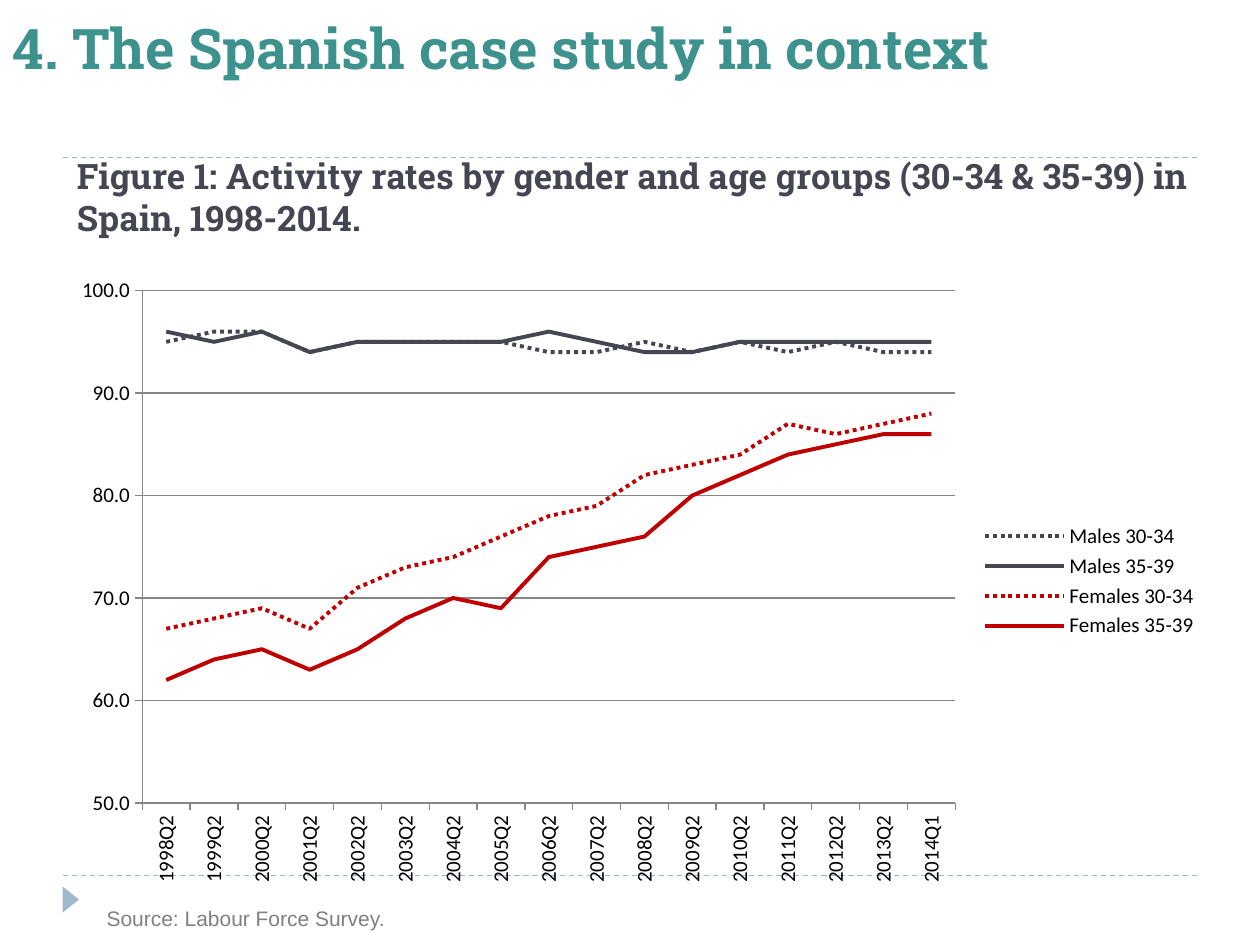
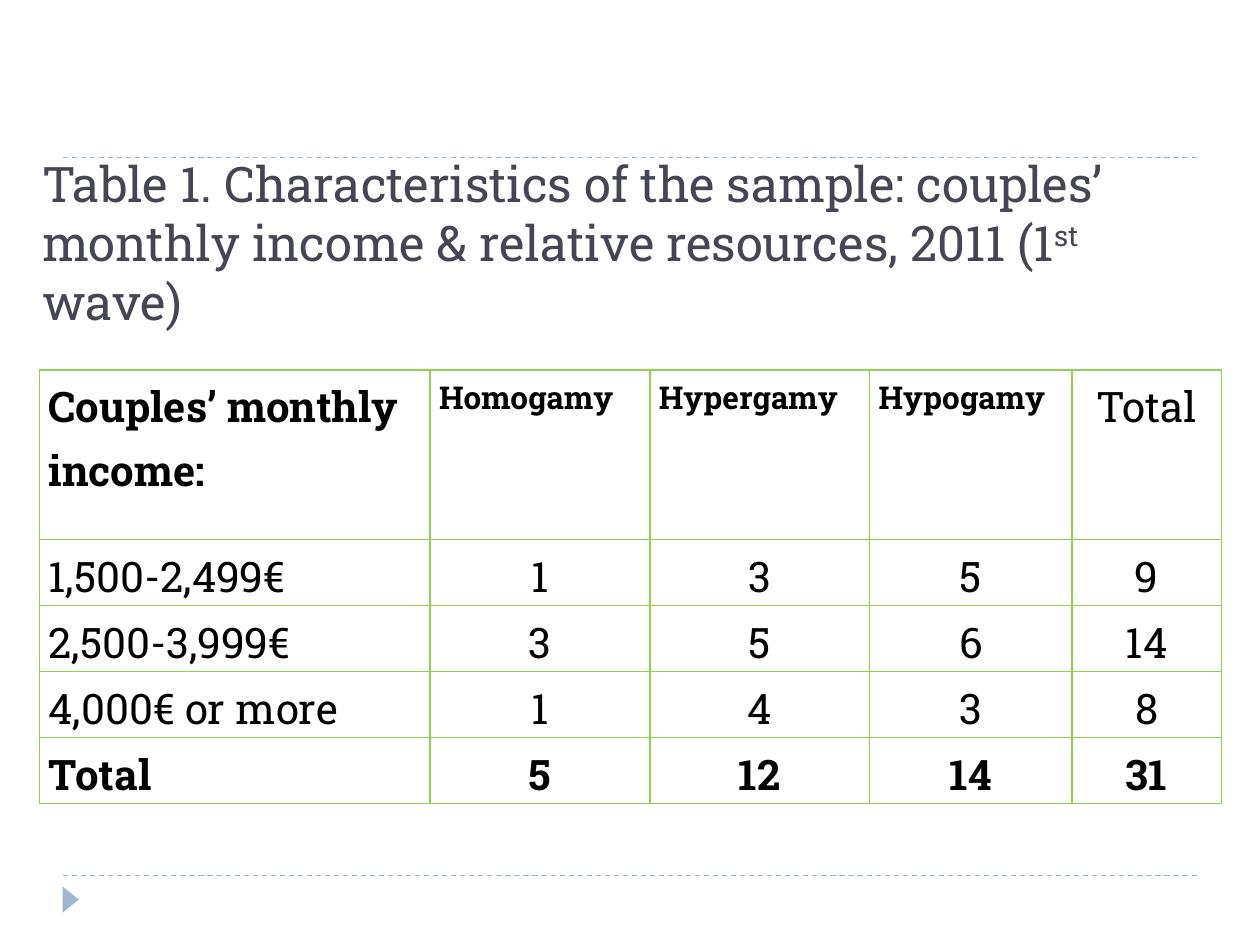
from dataclasses import dataclass

from pptx import Presentation
from pptx.chart.data import CategoryChartData
from pptx.dml.color import RGBColor
from pptx.enum.chart import XL_CHART_TYPE as ChartType, XL_LEGEND_POSITION as LegendSpot, XL_TICK_MARK as Tick
from pptx.enum.dml import MSO_LINE as Dash
from pptx.enum.shapes import MSO_CONNECTOR as Connector, MSO_SHAPE as Shape
from pptx.enum.text import MSO_ANCHOR as Anchor, PP_ALIGN as Align
from pptx.oxml.xmlchemy import OxmlElement as Element
from pptx.util import Cm, Pt


@dataclass(frozen=True)
class Theme:
    teal: str = "3E928E"
    slate: str = "464653"
    red: str = "C00000"
    rule: str = "9FB8CD"
    grey: str = "808080"
    axis: str = "868686"
    black: str = "000000"
    border: str = "92D050"
    head_font: str = "Roboto Slab"
    note_font: str = "Arial"
    chart_font: str = "Calibri"
    title: int = 32
    table_title: int = 28
    cell: int = 24
    caption: int = 20
    group: int = 18
    small: int = 12


THEME = Theme()

# Content: activity rates
SECTION = "4. The Spanish case study in context"
CAPTION = "Figure 1: Activity rates by gender and age groups (30-34 & 35-39) in Spain, 1998-2014."
SOURCE = "Source: Labour Force Survey."
QUARTERS = [f"{year}Q2" for year in range(1998, 2014)] + ["2014Q1"]
RATES = [  # name, colour, dotted, values
    ("Males 30-34", THEME.slate, True,
     [95, 96, 96, 94, 95, 95, 95, 95, 94, 94, 95, 94, 95, 94, 95, 94, 94]),
    ("Males 35-39", THEME.slate, False,
     [96, 95, 96, 94, 95, 95, 95, 95, 96, 95, 94, 94, 95, 95, 95, 95, 95]),
    ("Females 30-34", THEME.red, True,
     [67, 68, 69, 67, 71, 73, 74, 76, 78, 79, 82, 83, 84, 87, 86, 87, 88]),
    ("Females 35-39", THEME.red, False,
     [62, 64, 65, 63, 65, 68, 70, 69, 74, 75, 76, 80, 82, 84, 85, 86, 86]),
]
CHART_LEFT, CHART_TOP, CHART_WIDTH, CHART_HEIGHT = 1.19, 5.36, 23.22, 12.7
PLOT_AREA = {  # shares of the chart frame
    "x": 1.68 / CHART_WIDTH,
    "y": 0.5 / CHART_HEIGHT,
    "w": 16.39 / CHART_WIDTH,
    "h": 10.33 / CHART_HEIGHT,
}

# Content: sample table; a "^" marks raised text
TABLE_TITLE = ["Table 1. Characteristics of the sample: couples’ monthly income & relative resources, 2011 (1",
               "^st", " wave)"]
SAMPLE = [
    ("Couples’ monthly income:", "Homogamy", "Hypergamy", "Hypogamy", "Total"),
    ("1,500-2,499€", "1", "3", "5", "9"),
    ("2,500-3,999€", "3", "5", "6", "14"),
    ("4,000€ or more", "1", "4", "3", "8"),
    ("Total", "5", "12", "14", "31"),
]
COLUMN_WIDTHS = [7.87, 4.43, 4.43, 4.08, 3.01]
HEAD_HEIGHT, ROW_HEIGHT = 3.42, 1.33


def rgb(colour):
    return RGBColor.from_string(colour)


def child(parent, tag, **attributes):
    node = Element(tag)
    for name, value in attributes.items():
        node.set(name, str(value))
    parent.append(node)
    return node


def write(frame, text, *, size, colour, font=THEME.head_font, bold=False,
          align=Align.LEFT, spacing=None, after=None):
    """Fill the frame's first paragraph with a string or a list of spans."""
    para = frame.paragraphs[0]
    para.alignment = align
    if spacing:
        para.line_spacing = spacing
    if after:
        para.space_after = Pt(after)
    for part in [text] if isinstance(text, str) else text:
        span = para.add_run()
        span.text = part.lstrip("^")
        span.font.name, span.font.size, span.font.bold = font, Pt(size), bold
        span.font.color.rgb = rgb(colour)
        if part.startswith("^"):
            span.font._element.set("baseline", "30000")


def add_text(page, place, text, *, anchor=Anchor.BOTTOM, wrap=True, **style):
    frame = page.shapes.add_textbox(*map(Cm, place)).text_frame
    frame.word_wrap = wrap
    frame.vertical_anchor = anchor
    write(frame, text, **style)


def add_page(deck):
    """Add a blank page with the two dashed rules and the corner marker."""
    page = deck.slides.add_slide(deck.slide_layouts[6])
    for y in (17.65, 3.18):
        rule = page.shapes.add_connector(Connector.STRAIGHT, Cm(1.27), Cm(y), Cm(24.13), Cm(y))
        rule.line.color.rgb = rgb(THEME.rule)
        rule.line.width = Pt(0.75)
        rule.line.dash_style = Dash.DASH
        child(rule.element.xpath("p:spPr")[0], "a:effectLst")
    marker = page.shapes.add_shape(Shape.ISOSCELES_TRIANGLE, Cm(1.16), Cm(17.97), Cm(0.53), Cm(0.33))
    marker.rotation = 90
    marker.shadow.inherit = False
    marker.fill.solid()
    marker.fill.fore_color.rgb = rgb(THEME.rule)
    marker.line.fill.background()
    return page


def place_plot(chart):
    """Fix the inner plot area inside the chart frame."""
    plot_area = chart.element.xpath(".//c:plotArea")[0]
    for old in plot_area.xpath("c:layout"):
        plot_area.remove(old)
    layout = Element("c:layout")
    manual = child(layout, "c:manualLayout")
    child(manual, "c:layoutTarget", val="inner")
    for side in "xy":
        child(manual, f"c:{side}Mode", val="edge")
    for side, share in PLOT_AREA.items():
        child(manual, f"c:{side}", val=share)
    plot_area.insert(0, layout)


def add_rates_chart(page):
    data = CategoryChartData(number_format="0.0")
    data.categories = QUARTERS
    for name, _, _, values in RATES:
        data.add_series(name, values)
    chart = page.shapes.add_chart(ChartType.LINE, Cm(CHART_LEFT), Cm(CHART_TOP),
                                  Cm(CHART_WIDTH), Cm(CHART_HEIGHT), data).chart
    chart.has_title = False
    chart.font.name, chart.font.size = THEME.chart_font, Pt(THEME.small)
    chart.font.color.rgb = rgb(THEME.black)
    chart.has_legend = True
    chart.legend.position = LegendSpot.RIGHT
    chart.legend.include_in_layout = False
    chart.legend.font.size = Pt(THEME.small)

    # Axes
    rates, quarters = chart.value_axis, chart.category_axis
    rates.minimum_scale, rates.maximum_scale, rates.major_unit = 50, 100, 10
    rates.has_major_gridlines = True
    rates.tick_labels.number_format = "0.0"
    rates.tick_labels.number_format_is_linked = False
    for axis in (rates, quarters):
        axis.major_tick_mark, axis.minor_tick_mark = Tick.OUTSIDE, Tick.NONE
        axis.tick_labels.font.size = Pt(THEME.small)
    for part in (rates, quarters, rates.major_gridlines):
        part.format.line.color.rgb = rgb(THEME.axis)
        part.format.line.width = Pt(0.75)
    label_body = chart.element.xpath(".//c:catAx/c:txPr/a:bodyPr")[0]
    label_body.set("rot", "-5400000")
    label_body.set("vert", "horz")

    # Lines
    chart.plots[0].vary_by_categories = False
    for series, (_, colour, dotted, _) in zip(chart.plots[0].series, RATES):
        series.smooth = False
        series.format.line.color.rgb = rgb(colour)
        series.format.line.width = Pt(2.25)
        if dotted:
            series.format.line.dash_style = Dash.ROUND_DOT
    place_plot(chart)


def add_borders(cell):
    properties = cell._tc.get_or_add_tcPr()
    for side in "LRTB":
        line = child(properties, f"a:ln{side}", w=Pt(1))
        child(child(line, "a:solidFill"), "a:srgbClr", val=THEME.border)


def add_sample_table(page):
    heights = [HEAD_HEIGHT] + [ROW_HEIGHT] * (len(SAMPLE) - 1)
    table = page.shapes.add_table(len(SAMPLE), len(COLUMN_WIDTHS), Cm(0.8), Cm(7.46),
                                  Cm(sum(COLUMN_WIDTHS)), Cm(sum(heights))).table
    table.first_row = table.horz_banding = False
    for column, width in zip(table.columns, COLUMN_WIDTHS):
        column.width = Cm(width)
    for row, height in zip(table.rows, heights):
        row.height = Cm(height)
    last_row, last_column = len(SAMPLE) - 1, len(COLUMN_WIDTHS) - 1
    for r, texts in enumerate(SAMPLE):
        for c, text in enumerate(texts):
            cell = table.cell(r, c)
            add_borders(cell)
            cell.fill.background()
            cell.margin_left = cell.margin_right = Cm(0.18)
            cell.margin_top = cell.margin_bottom = 0
            is_group = r == 0 and 0 < c < last_column
            write(cell.text_frame, text, colour=THEME.black, spacing=1.15,
                  size=THEME.group if is_group else THEME.cell,
                  after=10 if is_group else None,
                  bold=r == last_row or (r == 0 and c < last_column),
                  align=Align.LEFT if c == 0 or is_group else Align.CENTER)


def main():
    deck = Presentation()
    deck.slide_width, deck.slide_height = Cm(25.4), Cm(19.05)

    # Activity rates
    page = add_page(deck)
    add_text(page, (0.01, -0.08, 25.4, 1.83), SECTION, size=THEME.title, colour=THEME.teal, bold=True)
    add_text(page, (1.3, 3.18, 23.39, 1.75), CAPTION, size=THEME.caption, colour=THEME.slate, bold=True)
    add_rates_chart(page)
    add_text(page, (1.9, 18.14, 6.17, 0.76), SOURCE, size=THEME.small, colour=THEME.grey,
             font=THEME.note_font, anchor=Anchor.TOP, wrap=False)

    # Sample
    page = add_page(deck)
    add_text(page, (0.6, 4.37, 24.41, 2.41), TABLE_TITLE, size=THEME.table_title, colour=THEME.slate)
    add_sample_table(page)

    deck.save("out.pptx")


if __name__ == "__main__":
    main()
